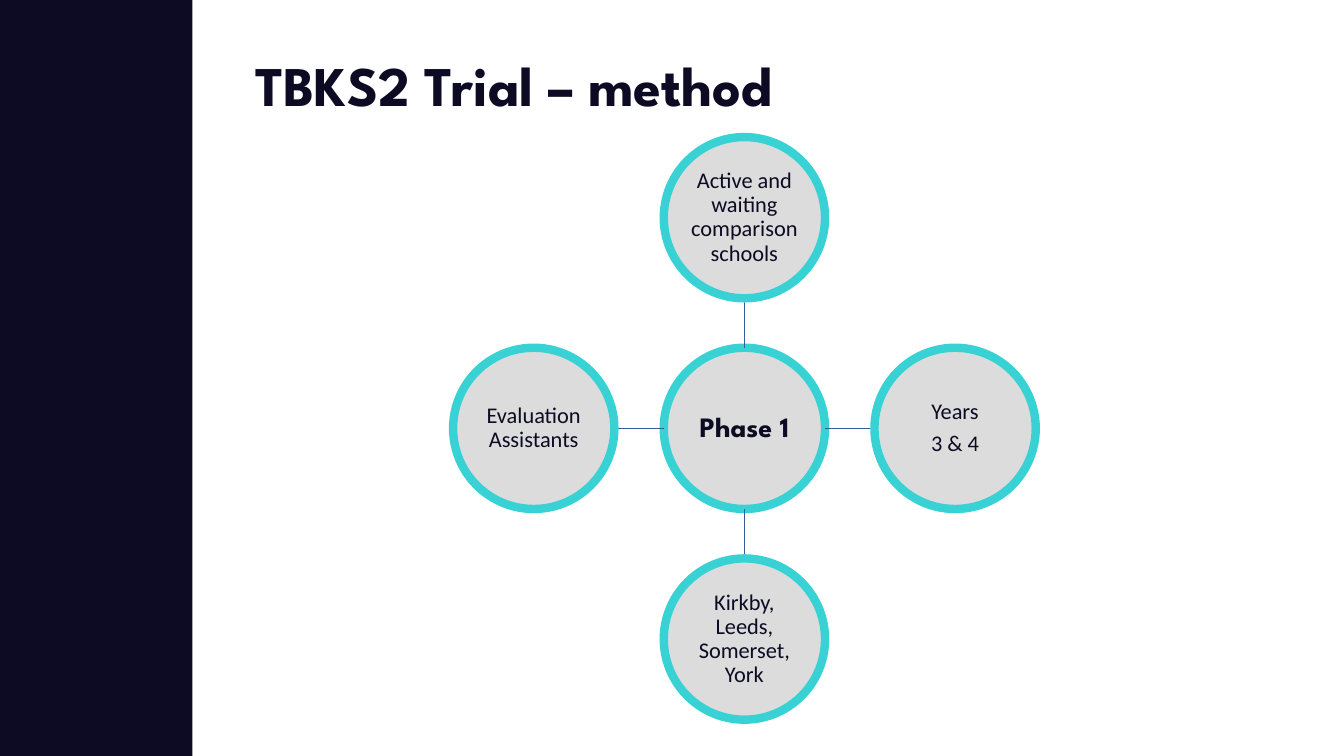
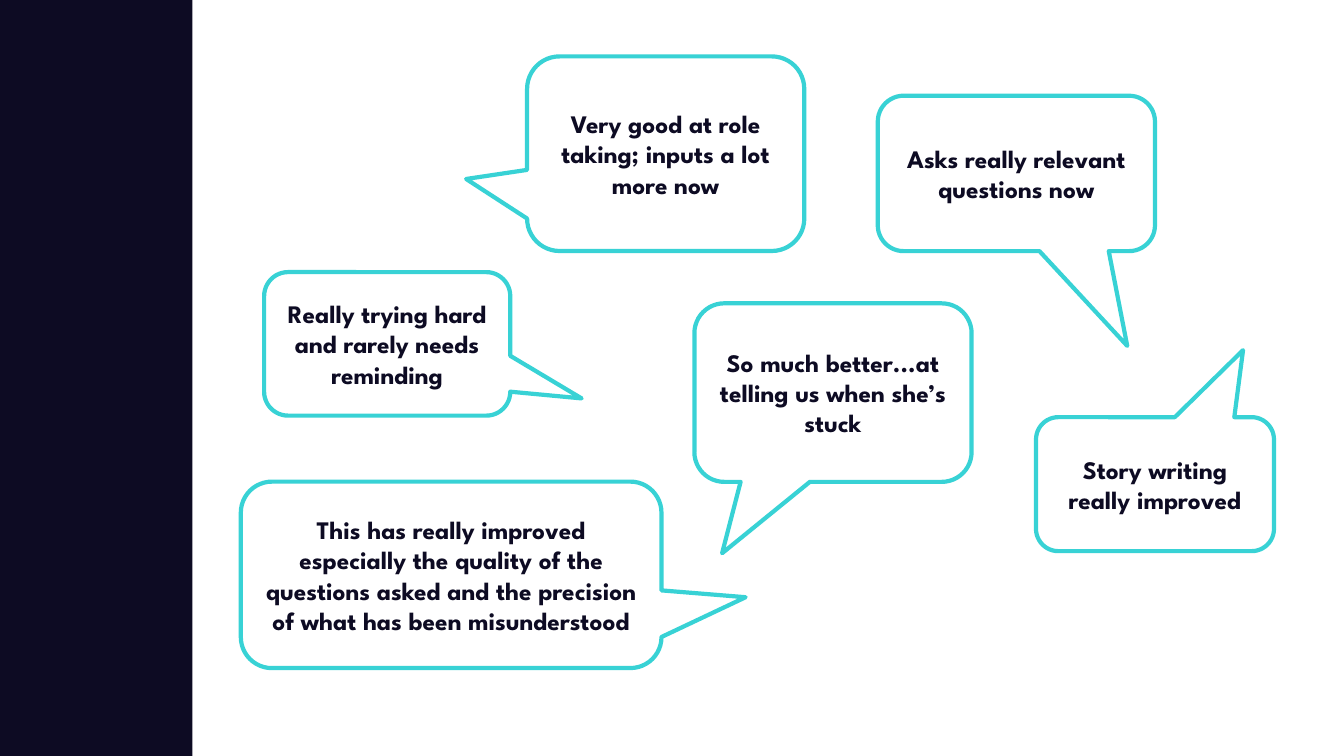
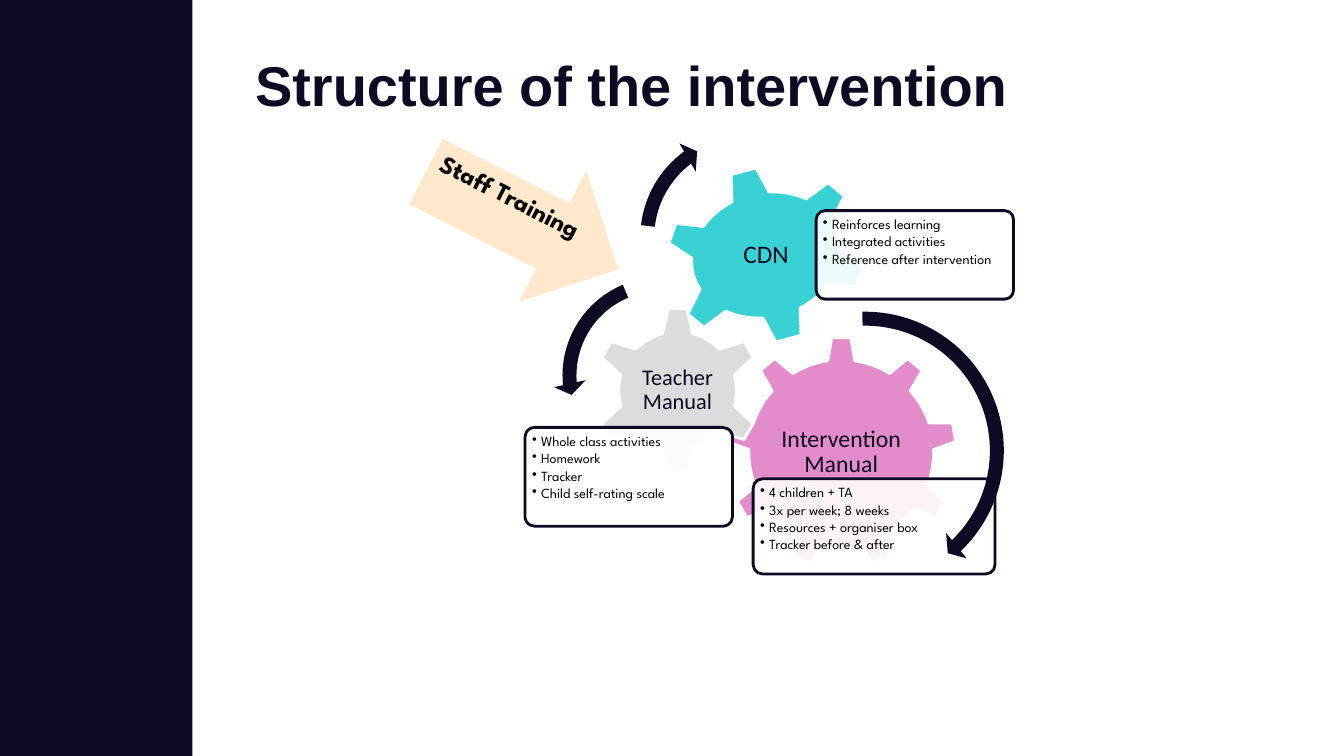
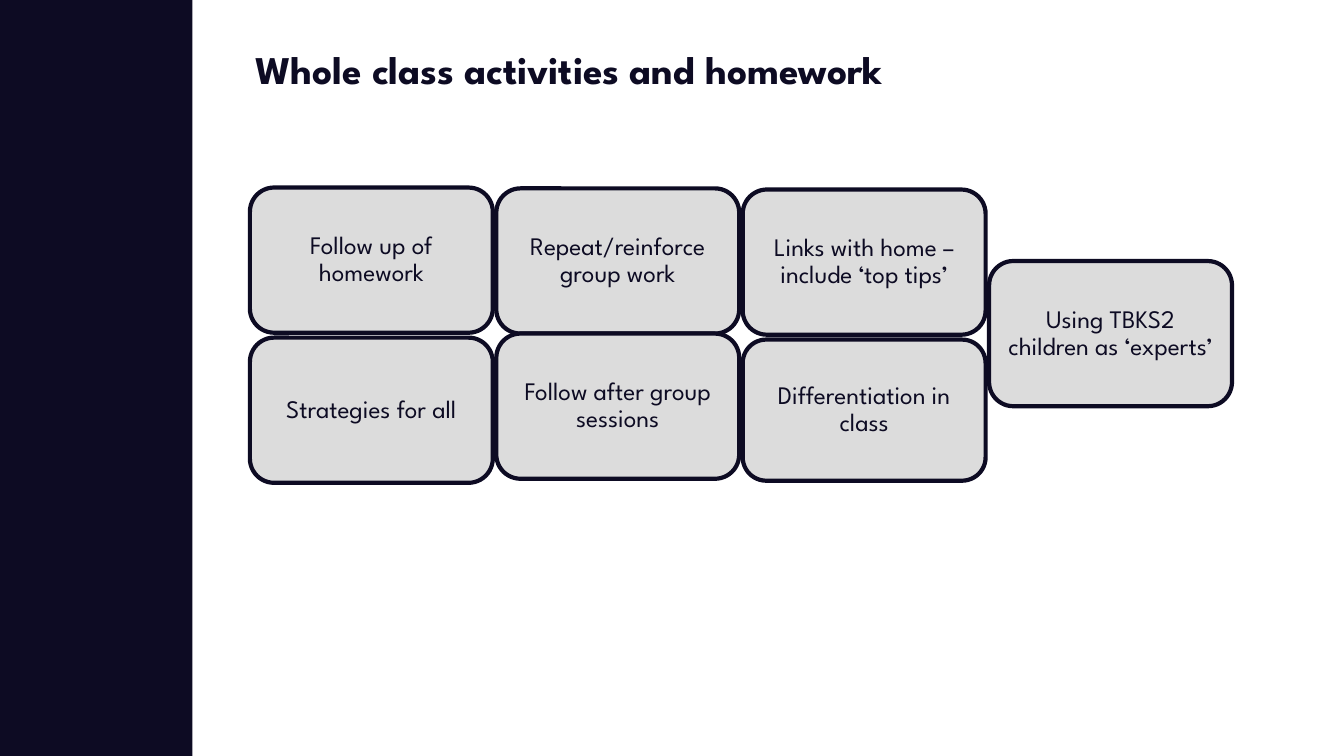
from dataclasses import dataclass

from lxml import etree
from pptx import Presentation
from pptx import util as u
from pptx.dml.color import RGBColor
from pptx.enum import shapes, text
from pptx.oxml import ns

Pt = u.Pt
Preset = shapes.MSO_SHAPE
Align = text.PP_ALIGN
Anchor = text.MSO_ANCHOR


@dataclass(frozen=True)
class Theme:
    navy: str = "0D0B23"
    teal: str = "38D2D5"
    grey: str = "DCDCDC"
    pink: str = "E28DC9"
    peach: str = "FFE8CC"
    blue: str = "365B9D"
    white: str = "FFFFFF"
    black: str = "000000"
    display: str = "League Spartan"
    plain: str = "Calibri"
    heading: str = "Arial"
    title_size: int = 40
    small_title_size: int = 28
    hub_size: int = 20
    body_size: int = 18
    manual_size: int = 17
    label_size: int = 16
    bullet_size: int = 10


class Deck:
    def __init__(self, theme):
        self.theme = theme
        self.prs = Presentation()
        self.prs.slide_width, self.prs.slide_height = Pt(960), Pt(540)
        self.slide = None

    def add_slide(self, title=None, **style):
        layout = self.prs.slide_layouts[5 if title else 6]
        self.slide = self.prs.slides.add_slide(layout)
        if len(self.prs.slides) == 1:
            band = self.shape(Preset.RECTANGLE, (0, 0, 137.5, 540), self.theme.navy)
            self.prs.slide_master.shapes._spTree.insert(2, band._element)
        if title:
            self.title(title, **style)

    def title(self, wording, font=None, size=None, spacing=0.9):
        heading = self.slide.shapes.title
        heading.left, heading.top = Pt(175), Pt(38)
        heading.width, heading.height = Pt(653), Pt(58)
        self.set_text(heading, [wording], size or self.theme.title_size, font=font, bold=True,
                      align=Align.LEFT, anchor=Anchor.TOP, spacing=spacing, margins=(7.2, 3.6))

    def shape(self, preset, box, fill=None, line=None, weight=0, adjust=(),
              rotation=0, alpha=None):
        item = self.slide.shapes.add_shape(preset, *map(Pt, box))
        item.shadow.inherit = False
        item.rotation = rotation
        for index, value in enumerate(adjust):
            item.adjustments[index] = value
        if fill:
            item.fill.solid()
            item.fill.fore_color.rgb = RGBColor.from_string(fill)
        else:
            item.fill.background()
        if alpha:
            colour = item._element.spPr.find(ns.qn("a:solidFill"))[0]
            etree.SubElement(colour, ns.qn("a:alpha"), val=str(alpha * 1000))
        if line:
            item.line.color.rgb = RGBColor.from_string(line)
            item.line.width = Pt(weight)
        else:
            item.line.fill.background()
        return item

    def set_text(self, item, lines, size, font=None, color=None, bold=False,
                 align=Align.CENTER, anchor=Anchor.MIDDLE, spacing=0.9, after=0,
                 margins=(1, 1), bullet_indent=None):
        frame = item.text_frame
        frame.word_wrap = True
        frame.auto_size = text.MSO_AUTO_SIZE.NONE
        frame.vertical_anchor = anchor
        frame.margin_left = frame.margin_right = Pt(margins[0])
        frame.margin_top = frame.margin_bottom = Pt(margins[1])
        for index, wording in enumerate(lines):
            paragraph = frame.add_paragraph() if index else frame.paragraphs[0]
            paragraph.alignment = align
            paragraph.line_spacing = spacing
            paragraph.space_before = Pt(0)
            if index < len(lines) - 1:
                paragraph.space_after = Pt(after)
            if bullet_indent:
                properties = paragraph._p.get_or_add_pPr()
                properties.set("marL", str(Pt(bullet_indent)))
                properties.set("indent", str(-Pt(bullet_indent)))
                etree.SubElement(properties, ns.qn("a:buChar"), char="•")
            run = paragraph.add_run()
            run.text = wording
            run.font.name = font or self.theme.display
            run.font.size = Pt(size)
            run.font.bold = bold
            run.font.color.rgb = RGBColor.from_string(color or self.theme.navy)

    def circle(self, center, radius, lines, size, **style):
        x, y = center
        box = (x - radius, y - radius, 2 * radius, 2 * radius)
        ring = self.shape(Preset.OVAL, box, self.theme.grey, self.theme.teal, 6)
        self.set_text(ring, lines, size, after=5.6, **style)

    def spoke(self, start, end):
        link = self.slide.shapes.add_connector(
            shapes.MSO_CONNECTOR.STRAIGHT, *map(Pt, start + end))
        link.line.color.rgb = RGBColor.from_string(self.theme.blue)
        link.line.width = Pt(1)
        etree.SubElement(link._element.spPr, ns.qn("a:effectLst"))

    def callout(self, box, tip, wording):
        bubble = self.shape(Preset.ROUNDED_RECTANGULAR_CALLOUT, box, line=self.theme.teal,
                            weight=3, adjust=tip)
        self.set_text(bubble, [wording], self.theme.body_size, bold=True, spacing=1,
                      margins=(7.2, 3.6))

    def gear(self, preset, box, fill, label, size, rotation=0):
        self.shape(preset, box, fill, self.theme.white, 2, rotation=rotation)
        left, top, width, height = box
        label_box = (left + width * 0.2, top + height * 0.25, width * 0.6, height * 0.5)
        caption = self.slide.shapes.add_textbox(*map(Pt, label_box))
        self.set_text(caption, [label], size, font=self.theme.plain)

    def bullet_card(self, box, points):
        card = self.shape(Preset.ROUNDED_RECTANGLE, box, self.theme.white, self.theme.navy,
                          2, adjust=(0.1,), alpha=90)
        self.set_text(card, points, self.theme.bullet_size, color=self.theme.black,
                      align=Align.LEFT, anchor=Anchor.TOP, after=1.5, margins=(3, 3),
                      bullet_indent=6.5)

    def card(self, box, wording):
        tile = self.shape(Preset.ROUNDED_RECTANGLE, box, self.theme.grey, self.theme.navy, 3)
        self.set_text(tile, [wording], self.theme.body_size, margins=(5, 5))


def method_slide(deck):
    theme = deck.theme
    deck.add_slide("TBKS2 Trial – method")
    hub_x, hub_y, radius, reach = 531.75, 306, 57.6, 150.5
    deck.circle((hub_x, hub_y), radius, ["Phase 1"], theme.hub_size, bold=True)
    satellites = [
        (0, -1, ["Active and waiting comparison schools"]),
        (1, 0, ["Years", "3 & 4"]),
        (0, 1, ["Kirkby, Leeds, Somerset, York"]),
        (-1, 0, ["Evaluation Assistants"]),
    ]
    for dx, dy, lines in satellites:
        near, far = [(hub_x + dx * distance, hub_y + dy * distance)
                     for distance in (radius, reach - radius)]
        deck.spoke(near, far)
        deck.circle((hub_x + dx * reach, hub_y + dy * reach), radius, lines,
                    theme.label_size, font=theme.plain)


def feedback_slide(deck):
    deck.add_slide()
    comments = [
        ((188.7, 194.4, 175.8, 102.5), (0.79, 0.38),
         "Really trying hard and rarely needs reminding"),
        ((627, 68.4, 198, 111), (0.4, 1.11), "Asks really relevant questions now"),
        ((376.5, 40.3, 198, 139), (-0.72, 0.13),
         "Very good at role taking; inputs a lot more now"),
        ((496, 216.7, 198, 127.5), (-0.4, 0.9),
         "So much better...at telling us when she’s stuck"),
        ((740, 298, 170, 95.7), (0.37, -1), "Story writing really improved"),
        ((172, 344, 300.5, 133.2), (0.7, 0.12),
         "This has really improved especially the quality of the questions asked"
         " and the precision of what has been misunderstood"),
    ]
    for box, tip, wording in comments:
        deck.callout(box, tip, wording)


def structure_slide(deck):
    theme = deck.theme
    deck.add_slide("Structure of the intervention", font=theme.heading)
    deck.gear(Preset.GEAR_9, (518.4, 240.5, 165, 165), theme.pink,
              "Intervention Manual", theme.manual_size)
    deck.bullet_card((538, 342, 172.8, 68), [
        "4 children + TA", "3x per week; 8 weeks", "Resources + organiser box",
        "Tracker before & after"])
    deck.gear(Preset.GEAR_6, (424, 219, 120, 120), theme.grey,
              "Teacher Manual", theme.label_size)
    deck.bullet_card((375, 305.3, 148.3, 70.6), [
        "Whole class activities", "Homework", "Tracker", "Child self-rating scale"])
    deck.gear(Preset.GEAR_6, (474.5, 118.8, 145.4, 126.7), theme.teal, "CDN",
              theme.body_size, rotation=345)
    deck.bullet_card((583, 150.5, 141, 63.2), [
        "Reinforces learning", "Integrated activities", "Reference after intervention"])
    cycle = [
        (Preset.CIRCULAR_ARROW, (512, 216, 211.7, 211.7), 4.3,
         (0.047, 2.99, 25.091, 158.765, 0.055)),
        (Preset.LEFT_CIRCULAR_ARROW, (395.3, 191.5, 153.4, 153.4), 0,
         (0.065, 4.3, 104.891, 148.378, 0.075)),
        (Preset.CIRCULAR_ARROW, (450.7, 87, 165.6, 165.6), 11.6,
         (0.06, 3.941, 133.138, 105.082, 0.07)),
    ]
    for preset, box, rotation, adjust in cycle:
        deck.shape(preset, box, theme.navy, adjust=adjust, rotation=rotation)
    training = deck.shape(Preset.RIGHT_ARROW, (296, 105, 154, 105), theme.peach, rotation=27)
    deck.set_text(training, ["Staff Training"], theme.body_size, color=theme.black, bold=True,
                  align=Align.LEFT, anchor=Anchor.TOP, spacing=1, margins=(7.2, 3.6))


def homework_slide(deck):
    deck.add_slide("Whole class activities and homework", size=deck.theme.small_title_size,
                   spacing=0.7)
    columns = [
        [(134, 103.7, "Follow up of homework"), (241.2, 103.7, "Strategies for all")],
        [(134.6, 103.7, "Repeat/reinforce group work"),
         (238.3, 103.7, "Follow after group sessions")],
        [(135.4, 103.7, "Links with home – include ‘top tips’"),
         (242.6, 100.8, "Differentiation in class")],
        [(186.5, 103.7, "Using TBKS2 children as ‘experts’")],
    ]
    for index, cards in enumerate(columns):
        for top, height, wording in cards:
            deck.card((178.5 + index * 176, top, 173.5, height), wording)


def main():
    deck = Deck(Theme())
    for build in (method_slide, feedback_slide, structure_slide, homework_slide):
        build(deck)
    deck.prs.save("out.pptx")


if __name__ == "__main__":
    main()
